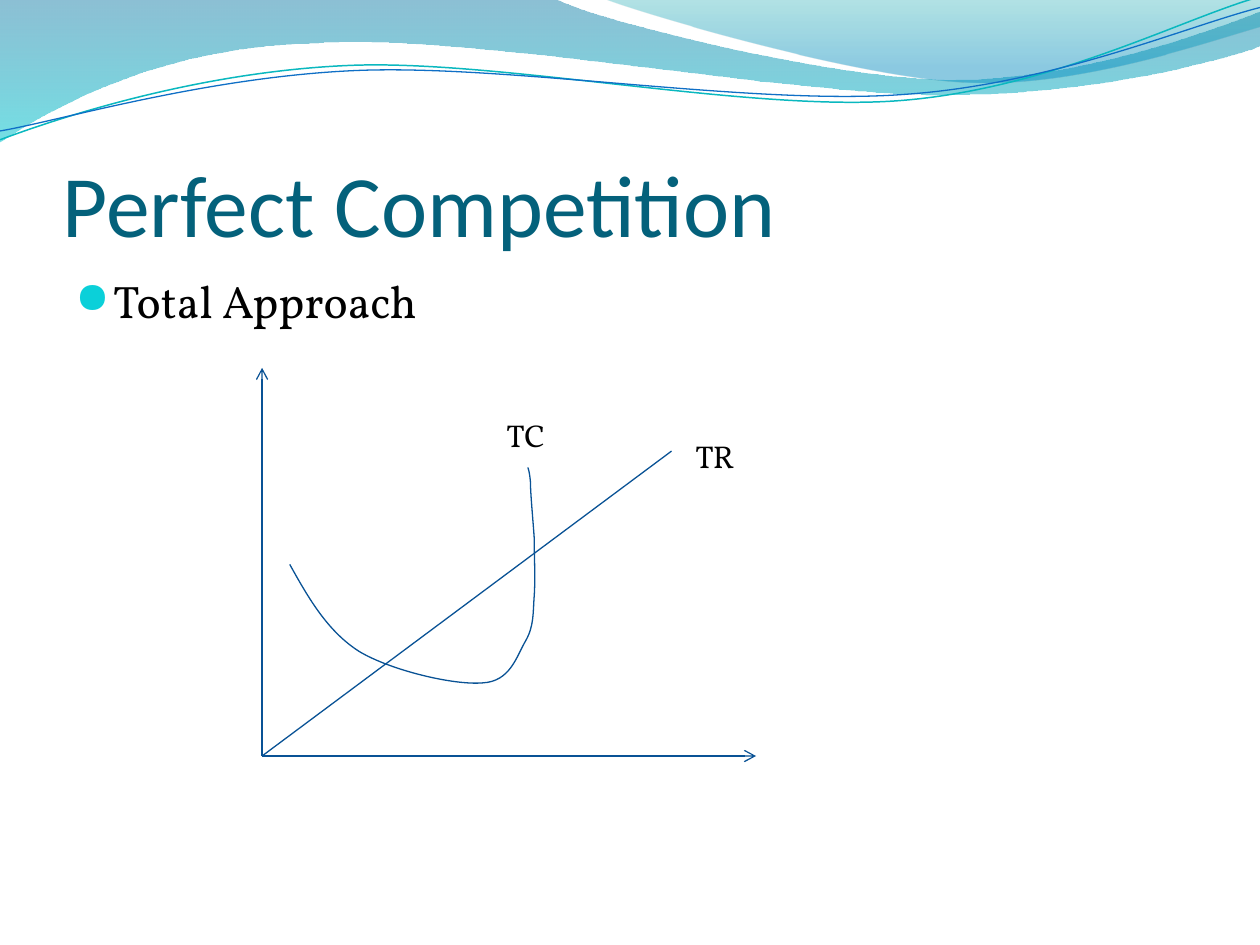
from math import cos, radians, sin

from lxml.etree import SubElement
from pptx import Presentation
from pptx.dml.color import RGBColor
from pptx.enum.shapes import MSO_CONNECTOR
from pptx.enum.text import MSO_ANCHOR, MSO_AUTO_SIZE
from pptx.oxml.ns import qn
from pptx.util import Inches, Pt

TITLE_BLUE = RGBColor(0x04, 0x61, 0x7B)
BLACK = RGBColor(0, 0, 0)
BULLET_CYAN = RGBColor(0x0B, 0xD0, 0xD9)
GRAPH_BLUE = RGBColor(0x09, 0x52, 0x95)
WAVE_TEAL = RGBColor(0x0A, 0xB8, 0xBF)
WAVE_BLUE = RGBColor(0x0F, 0x6F, 0xC6)
BAND_BLUE = RGBColor(0x00, 0x74, 0xA1)
BAND_CYAN = RGBColor(0x00, 0xC6, 0xCF)
CREST_TEAL = RGBColor(0x00, 0xA1, 0xA9)
CREST_BLUE = RGBColor(0x00, 0x8B, 0xBF)

presentation = Presentation()
presentation.slide_width = Inches(10)
presentation.slide_height = Inches(7.5)
slide = presentation.slides.add_slide(presentation.slide_layouts[6])


def add_outline(segments, closed=False, color=None, width=0.75, tilt=0, pivot=(0, 0)):
    cosine, sine = cos(radians(tilt)), sin(radians(tilt))
    turned = []
    for segment in segments:
        offsets = [(x - pivot[0], y - pivot[1]) for x, y in zip(segment[::2], segment[1::2])]
        turned.append([
            (Inches(pivot[0] + x * cosine + y * sine), Inches(pivot[1] - x * sine + y * cosine))
            for x, y in offsets
        ])
    builder = slide.shapes.build_freeform(*turned[0][0])
    builder.add_line_segments([points[-1] for points in turned[1:]], close=closed)
    shape = builder.convert_to_shape()
    shape.shadow.inherit = False
    for element, points in zip(list(shape._element.spPr.iter(qn("a:lnTo"))), turned[1:]):
        if len(points) == 3:
            curve = element.makeelement(qn("a:cubicBezTo"))
            for x, y in points:
                SubElement(curve, qn("a:pt"), x=str(x - shape.left), y=str(y - shape.top))
            element.getparent().replace(element, curve)
    shape.rotation = tilt
    if color is None:
        shape.line.fill.background()
    else:
        shape.fill.background()
        shape.line.color.rgb = color
        shape.line.width = Pt(width)
    return shape


def add_text(text, left, top, width, height, size, font, color,
             insets=(0.1, 0.05, 0.1, 0.05), anchor=MSO_ANCHOR.TOP, grow=False):
    shape = slide.shapes.add_textbox(Inches(left), Inches(top), Inches(width), Inches(height))
    frame = shape.text_frame
    frame.word_wrap = True
    frame.auto_size = MSO_AUTO_SIZE.SHAPE_TO_FIT_TEXT if grow else MSO_AUTO_SIZE.NONE
    frame.vertical_anchor = anchor
    frame.margin_left, frame.margin_top, frame.margin_right, frame.margin_bottom = map(Inches, insets)
    paragraph = frame.paragraphs[0]
    run = paragraph.add_run()
    run.text = text
    run.font.size = Pt(size)
    run.font.name = font
    run.font.color.rgb = color
    return paragraph


bands = [
    ([
        (0, 0), (4.4, -0.01), (4.76, 0.17, 6.64, 0.63, 7.58, 0.63),
        (8.53, 0.63, 9.58, 0.26, 10, 0.09), (10.01, 0.36),
        (9.83, 0.44, 8.7, 0.76, 7.46, 0.75), (6.22, 0.75, 3.82, 0.28, 2.57, 0.34),
        (1.29, 0.36, 0.46, 0.83, -0.01, 1.13),
    ], [(0, BAND_BLUE, 45), (1, BAND_CYAN, 55)]),
    ([
        (4.79, -0.01), (5.09, 0.11, 6.82, 0.62, 7.69, 0.65),
        (8.56, 0.69, 9.61, 0.32, 10, 0.21), (10, 0),
    ], [(0, CREST_TEAL, 30), (0.8, CREST_BLUE, 45)]),
]
for segments, stops in bands:
    shape = add_outline(segments, closed=True)
    shape.fill.gradient()
    shape.fill.gradient_angle = 270
    for stop, (position, color, opacity) in zip(shape.fill.gradient_stops, stops):
        stop.position = position
        stop.color.rgb = color
    for element, (position, color, opacity) in zip(shape._element.spPr.iter(qn("a:srgbClr")), stops):
        SubElement(element, qn("a:alpha"), val=str(opacity * 1000))

waves = [
    ([
        (0, 1.11), (0.48, 0.93, 1.58, 0.57, 2.77, 0.52), (3.95, 0.47, 5.93, 0.89, 7.13, 0.8),
        (8.33, 0.71, 9.38, 0.15, 9.98, -0.02),
    ], WAVE_TEAL, 0.85),
    ([
        (0, 1.04), (0.47, 0.96, 1.64, 0.61, 2.83, 0.56), (4.03, 0.51, 5.97, 0.84, 7.17, 0.75),
        (8.36, 0.67, 9.41, 0.21, 10, 0.06),
    ], WAVE_BLUE, 0.75),
]
for segments, color, width in waves:
    add_outline(segments, color=color, width=width, tilt=-2.7, pivot=(5, 0.58))

add_text("Perfect Competition", 0.5, 0.77, 9, 1.25, size=50, font="Calibri", color=TITLE_BLUE,
         insets=(0, 0.05, 0, 0), anchor=MSO_ANCHOR.BOTTOM)

paragraph = add_text("Total Approach", 0.5, 2.12, 9, 4.8, size=26, font="Vollkorn", color=BLACK)
paragraph.space_before = Pt(5.2)
properties = paragraph._p.get_or_add_pPr()
properties.set("marL", str(Inches(0.3)))
properties.set("indent", str(Inches(-0.3)))
bullet_color = SubElement(properties, qn("a:buClr"))
SubElement(bullet_color, qn("a:srgbClr"), val=str(BULLET_CYAN))
SubElement(properties, qn("a:buSzPct"), val="95000")
SubElement(properties, qn("a:buFont"), typeface="OpenSymbol")
SubElement(properties, qn("a:buChar"), char="●")

origin_x, origin_y = 2.08, 6
for end_x, end_y, has_arrow in [(origin_x, 2.92, True), (6, origin_y, True), (5.33, 3.58, False)]:
    connector = slide.shapes.add_connector(
        MSO_CONNECTOR.STRAIGHT, Inches(origin_x), Inches(origin_y), Inches(end_x), Inches(end_y))
    connector.line.color.rgb = GRAPH_BLUE
    connector.line.width = Pt(0.75)
    if has_arrow:
        SubElement(connector.line._get_or_add_ln(), qn("a:tailEnd"), type="arrow")
    SubElement(connector._element.spPr, qn("a:effectLst"))

add_outline([
    (2.3, 4.48), (2.45, 4.75, 2.6, 5.01, 2.85, 5.17), (3.1, 5.32, 3.6, 5.44, 3.83, 5.42),
    (4.05, 5.41, 4.1, 5.21, 4.17, 5.09), (4.24, 4.97, 4.23, 4.86, 4.24, 4.73),
    (4.25, 4.59, 4.24, 4.42, 4.24, 4.27), (4.23, 4.12, 4.21, 3.91, 4.21, 3.82),
    (4.2, 3.72, 4.19, 3.72, 4.19, 3.71),
], color=GRAPH_BLUE)

for label, left, top, width in [("TR", 5.42, 3.42, 0.83), ("TC", 3.92, 3.25, 0.67)]:
    add_text(label, left, top, width, 0.4, size=18, font="Vollkorn", color=BLACK, grow=True)

presentation.save("out.pptx")
